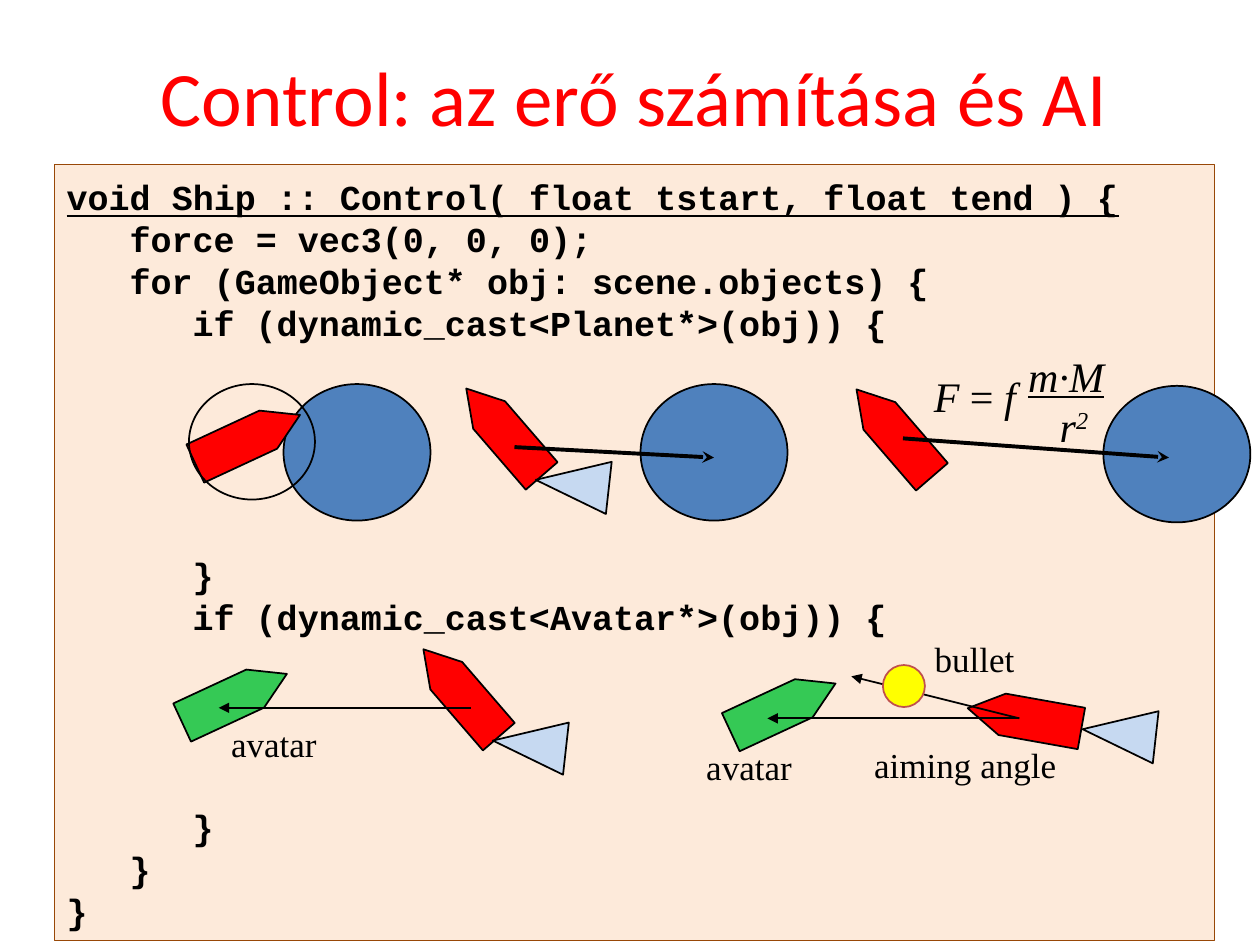
"""Slide on how a ship's control step computes force and AI behaviour."""
from dataclasses import dataclass

from lxml import etree
from pptx import Presentation
from pptx.dml.color import RGBColor
from pptx.enum import shapes, text
from pptx.oxml import ns
from pptx.util import Pt


@dataclass(frozen=True)
class Theme:
    red: str = "FF0000"
    black: str = "000000"
    panel: str = "FDEADA"
    panel_edge: str = "984807"
    planet: str = "4F81BD"
    flame: str = "C6D9F1"
    avatar: str = "35C955"
    bullet: str = "FFFF00"
    bullet_edge: str = "C0504D"
    title_font: str = "Calibri"
    code_font: str = "Courier New"
    label_font: str = "Times New Roman"
    title_size: int = 44
    formula_size: int = 24
    text_size: int = 20


THEME = Theme()
CODE_LINE = 24
CODE_INDENT = 36
SHIP_OUTLINE = [(0, 66), (0, 20), (12, 0), (24, 20), (24, 66)]
FLAME_OUTLINE = [(0, 0), (15, 42), (30, 0)]
CODE = [
    (0, "void Ship :: Control( float tstart, float tend ) {", 0),
    (1, "force = vec3(0, 0, 0);", 0),
    (1, "for (GameObject* obj: scene.objects) {", 0),
    (2, "if (dynamic_cast<Planet*>(obj)) {", 5),
    (2, "}", 0),
    (2, "if (dynamic_cast<Avatar*>(obj)) {", 4),
    (2, "}", 0),
    (1, "}", 0),
    (0, "}", 0),
]


def add_run(paragraph, words, font, size, color=THEME.black, **styles):
    """Append one formatted run and return it."""
    run = paragraph.add_run()
    run.text = words
    run.font.name = font
    run.font.size = Pt(size)
    run.font.color.rgb = RGBColor.from_string(color)
    for style, value in styles.items():
        setattr(run.font, style, value)
    return run


def paint(figure, fill, edge=THEME.black, weight=1):
    """Give a shape its fill and outline without a shadow."""
    figure.shadow.inherit = False
    if fill:
        figure.fill.solid()
        figure.fill.fore_color.rgb = RGBColor.from_string(fill)
    else:
        figure.fill.background()
    figure.line.color.rgb = RGBColor.from_string(edge)
    figure.line.width = Pt(weight)


def add_title(slide, words):
    """Fill and place the title placeholder."""
    title = slide.shapes.title
    title.left, title.top, title.width, title.height = Pt(31), Pt(9.5), Pt(663), Pt(90)
    title.text_frame.vertical_anchor = text.MSO_ANCHOR.MIDDLE
    paragraph = title.text_frame.paragraphs[0]
    paragraph.alignment = text.PP_ALIGN.CENTER
    add_run(paragraph, words, THEME.title_font, THEME.title_size, THEME.red)


def add_code(slide, lines):
    """Draw the code panel, leaving room for the scenes between lines."""
    panel = slide.shapes.add_shape(
        shapes.MSO_SHAPE.RECTANGLE, Pt(31), Pt(94), Pt(663), Pt(443.5))
    paint(panel, THEME.panel, THEME.panel_edge, 0.75)
    frame = panel.text_frame
    frame.word_wrap = True
    frame.vertical_anchor = text.MSO_ANCHOR.TOP
    frame.margin_top = Pt(6.5)
    for number, (level, words, gap_lines) in enumerate(lines):
        paragraph = frame.add_paragraph() if number else frame.paragraphs[0]
        paragraph.alignment = text.PP_ALIGN.LEFT
        paragraph.line_spacing = Pt(CODE_LINE)
        paragraph.space_after = Pt(gap_lines * CODE_LINE)
        paragraph._p.get_or_add_pPr().set("marL", str(Pt(level * CODE_INDENT)))
        add_run(paragraph, words, THEME.code_font, THEME.text_size,
                bold=True, underline=number == 0)


def add_disc(slide, left, top, width, height, fill, edge=THEME.black):
    """Draw an ellipse."""
    disc = slide.shapes.add_shape(
        shapes.MSO_SHAPE.OVAL, Pt(left), Pt(top), Pt(width), Pt(height))
    paint(disc, fill, edge)


def add_planet(slide, left, top):
    """Draw a planet."""
    add_disc(slide, left, top, 84, 78, THEME.planet)


def add_outline(slide, points, left, top, rotation, fill):
    """Draw a closed polygon turned about its centre."""
    builder = slide.shapes.build_freeform(*points[0], scale=float(Pt(1)))
    builder.add_line_segments(points[1:], close=True)
    polygon = builder.convert_to_shape(Pt(left), Pt(top))
    polygon.rotation = rotation
    paint(polygon, fill)


def add_ship(slide, left, top, rotation, fill=THEME.red):
    """Draw a ship."""
    add_outline(slide, SHIP_OUTLINE, left, top, rotation, fill)


def add_flame(slide, left, top):
    """Draw the exhaust flame behind a ship."""
    add_outline(slide, FLAME_OUTLINE, left, top, 96.3, THEME.flame)


def add_arrow(slide, start, end, weight=1, head="triangle"):
    """Draw a straight arrow from start to end."""
    arrow = slide.shapes.add_connector(
        shapes.MSO_CONNECTOR.STRAIGHT, *map(Pt, start + end))
    arrow.line.color.rgb = RGBColor.from_string(THEME.black)
    arrow.line.width = Pt(weight)
    etree.SubElement(arrow.line._get_or_add_ln(), ns.qn("a:tailEnd"), type=head)
    etree.SubElement(arrow._element.spPr, ns.qn("a:effectLst"))


def add_label_frame(slide, left, top, width, height):
    """Add an unwrapped text box and return its frame."""
    label = slide.shapes.add_textbox(Pt(left), Pt(top), Pt(width), Pt(height))
    label.text_frame.word_wrap = False
    return label.text_frame


def add_label(slide, words, left, top, width):
    """Add a one-line label."""
    frame = add_label_frame(slide, left, top, width, 31.5)
    add_run(frame.paragraphs[0], words, THEME.label_font, THEME.text_size)


def add_gravity_formula(slide):
    """Write the law of gravity as a left side and a fraction."""
    font, size = THEME.label_font, THEME.formula_size
    left_side = add_label_frame(slide, 526.5, 208, 68, 36).paragraphs[0]
    for words, slanted in (("F", True), (" = ", False), ("f", True)):
        add_run(left_side, words, font, size, italic=slanted)
    fraction = add_label_frame(slide, 580.5, 196.5, 58, 65.5)
    add_run(fraction.paragraphs[0], "m·M", font, size, italic=True, underline=True)
    divisor = fraction.add_paragraph()
    divisor._p.get_or_add_pPr().set("marL", str(Pt(18)))
    add_run(divisor, "r", font, size, italic=True)
    exponent = add_run(divisor, "2", font, size, italic=True)
    exponent._r.get_or_add_rPr().set("baseline", "30000")


def add_planet_scenes(slide):
    """Show collision, steering away and gravity near a planet."""
    add_planet(slide, 162, 219.5)
    add_ship(slide, 129.5, 218, 65.1)
    add_disc(slide, 108, 219.5, 72, 66, None)

    add_planet(slide, 366, 219.5)
    add_ship(slide, 276, 214, 319.2)
    add_arrow(slide, (294, 255.5), (408, 261.5), 2.25, "stealth")
    add_flame(slide, 312, 255.5)

    add_planet(slide, 630.5, 220.5)
    add_ship(slide, 499, 214.5, 319.2)
    add_arrow(slide, (516, 250.5), (668, 261.5), 2.25, "stealth")
    add_gravity_formula(slide)


def add_avatar_scenes(slide):
    """Show chasing the avatar and shooting at it."""
    add_ship(slide, 251.5, 363, 319.2)
    add_flame(slide, 287.5, 404.5)
    add_ship(slide, 122, 366, 65.1, THEME.avatar)
    add_label(slide, "avatar", 125, 409.5, 64)
    add_arrow(slide, (269, 404.5), (125, 404.5))

    add_ship(slide, 573.5, 377.5, 280.1)
    add_flame(slide, 624.5, 398)
    add_ship(slide, 435.5, 371.5, 65.1, THEME.avatar)
    add_label(slide, "avatar", 396.5, 422.5, 64)
    add_arrow(slide, (582.5, 410.5), (438.5, 410.5))
    add_arrow(slide, (582.5, 410.5), (486.5, 386.5))
    add_disc(slide, 504.5, 380, 24, 24, THEME.bullet, THEME.bullet_edge)
    add_label(slide, "bullet", 527, 360.5, 60.5)
    add_label(slide, "aiming angle", 492.5, 421.5, 119.5)


def main():
    """Build the slide and save it."""
    deck = Presentation()
    deck.slide_width, deck.slide_height = Pt(720), Pt(540)
    slide = deck.slides.add_slide(deck.slide_layouts.get_by_name("Title Only"))
    add_title(slide, "Control: az erő számítása és AI")
    add_code(slide, CODE)
    add_planet_scenes(slide)
    add_avatar_scenes(slide)
    deck.save("out.pptx")


if __name__ == "__main__":
    main()
